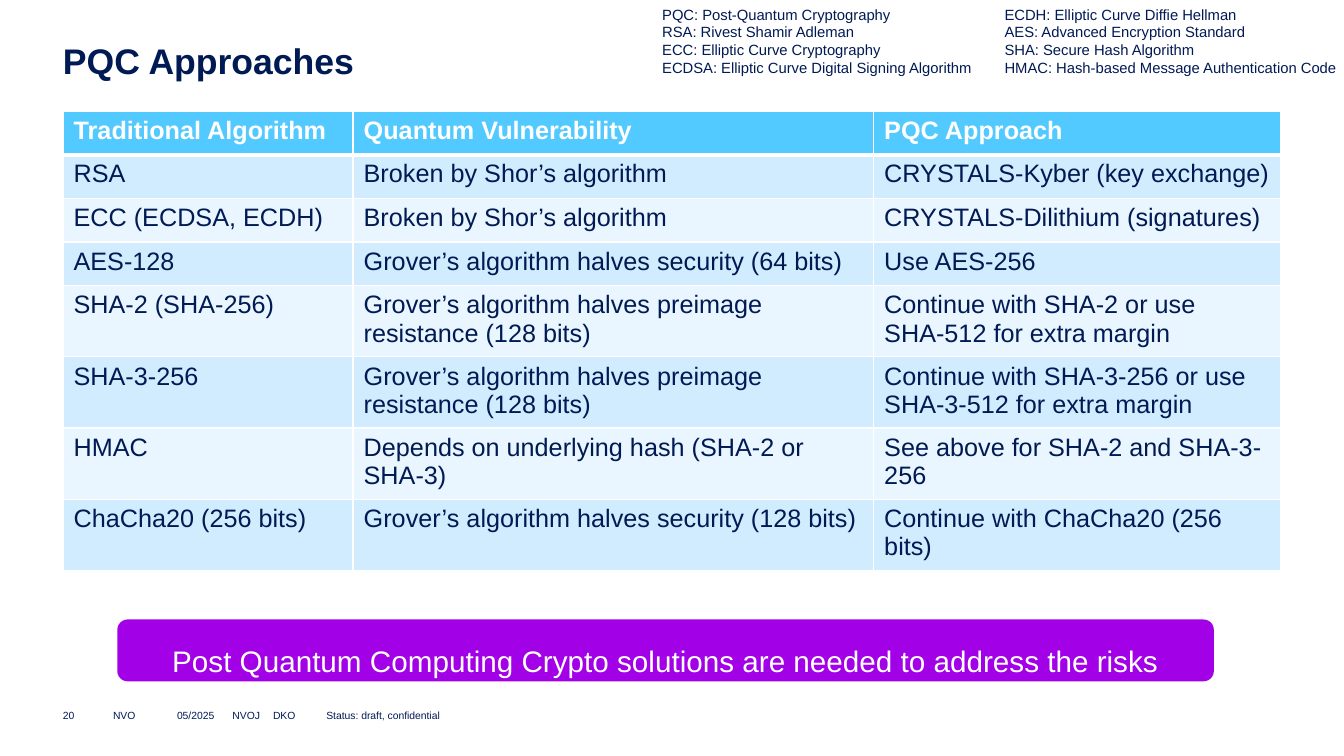
from pptx import Presentation
from pptx import util as u
from pptx.dml.color import RGBColor
from pptx.enum import shapes, text
from pptx.oxml import parse_xml
from pptx.oxml.ns import nsdecls

# Content
TITLE = "PQC Approaches"
TERMS = [
    (6.11, ["PQC: Post-Quantum Cryptography",
            "RSA: Rivest Shamir Adleman",
            "ECC: Elliptic Curve Cryptography",
            "ECDSA: Elliptic Curve Digital Signing Algorithm"]),
    (9.32, ["ECDH: Elliptic Curve Diffie Hellman",
            "AES: Advanced Encryption Standard",
            "SHA: Secure Hash Algorithm",
            "HMAC: Hash-based Message Authentication Code"]),
]
ROWS = [
    ("Traditional Algorithm", "Quantum Vulnerability", "PQC Approach"),
    ("RSA", "Broken by Shor’s algorithm", "CRYSTALS-Kyber (key exchange)"),
    ("ECC (ECDSA, ECDH)", "Broken by Shor’s algorithm",
     "CRYSTALS-Dilithium (signatures)"),
    ("AES-128", "Grover’s algorithm halves security (64 bits)", "Use AES-256"),
    ("SHA-2 (SHA-256)",
     "Grover’s algorithm halves preimage resistance (128 bits)",
     "Continue with SHA-2 or use SHA-512 for extra margin"),
    ("SHA-3-256",
     "Grover’s algorithm halves preimage resistance (128 bits)",
     "Continue with SHA-3-256 or use SHA-3-512 for extra margin"),
    ("HMAC", "Depends on underlying hash (SHA-2 or SHA-3)",
     "See above for SHA-2 and SHA-3-256"),
    ("ChaCha20 (256 bits)", "Grover’s algorithm halves security (128 bits)",
     "Continue with ChaCha20 (256 bits)"),
]
CLAIM = "Post Quantum Computing Crypto solutions are needed to address the risks"
PAGE = "20"
FOOTER = ["NVO", "05/2025", "NVOJ", "DKO", "Status: draft, confidential"]
STOPS = [0.2, 0.6, 0.85, 1.12]

# Style
HUE = {"navy": "001A54", "white": "FFFFFF", "head": "52C9FF",
       "odd": "D1EBFF", "even": "E9F5FF", "claim": "A200E6"}
FONT = "Arial"
LEFT, WIDTH = 0.59, 11.42
COLS = [2.72, 4.88, 3.82]
ROW_H = 0.41


def color(name):
    return RGBColor.from_string(HUE[name])


def write(frame, lines, size, hue="navy", bold=False, align=None,
          inset=None, anchor=None, stops=()):
    """Fill a text frame, one paragraph per line."""
    frame.word_wrap = True
    if anchor is not None:
        frame.vertical_anchor = anchor
    if inset is not None:
        (frame.margin_left, frame.margin_top,
         frame.margin_right, frame.margin_bottom) = map(u.Inches, inset)
    for i, line in enumerate(lines):
        para = frame.paragraphs[0] if i == 0 else frame.add_paragraph()
        if stops:
            tabs = "".join(f'<a:tab pos="{u.Inches(s)}" algn="l"/>' for s in stops)
            para._p.get_or_add_pPr().append(
                parse_xml(f'<a:tabLst {nsdecls("a")}>{tabs}</a:tabLst>'))
        if align is not None:
            para.alignment = align
        run = para.add_run()
        run.text = line
        font = run.font
        font.name, font.size, font.bold = FONT, u.Pt(size), bold
        font.color.rgb = color(hue)
    return frame


def place(x, y, w, h):
    return [u.Inches(v) for v in (x, y, w, h)]


def border(cell, top, bottom):
    props = cell._tc.get_or_add_tcPr()
    for side, width in zip("LRTB", (1, 1, top, bottom)):
        props.append(parse_xml(
            f'<a:ln{side} {nsdecls("a")} w="{u.Pt(width)}"><a:solidFill>'
            f'<a:srgbClr val="{HUE["white"]}"/></a:solidFill></a:ln{side}>'))


def main():
    deck = Presentation()
    deck.slide_width, deck.slide_height = u.Inches(12.6), u.Inches(7.09)
    slide = deck.slides.add_slide(deck.slide_layouts[6])
    parts = slide.shapes
    flat, mid = (0, 0, 0, 0), text.MSO_ANCHOR.MIDDLE

    # Title
    box = parts.add_textbox(*place(LEFT, 0.39, WIDTH, 0.4))
    title = write(box.text_frame, [TITLE], 24, bold=True, inset=flat)
    title.paragraphs[0].line_spacing = 0.97

    # Footer and page number
    box = parts.add_textbox(*place(1.06, 6.61, 5.04, 0.2))
    write(box.text_frame, ["\t".join(FOOTER)], 7, inset=flat, anchor=mid,
          stops=STOPS)
    box = parts.add_textbox(*place(LEFT, 6.61, 0.39, 0.2))
    write(box.text_frame, [PAGE], 7, inset=flat, anchor=mid)

    # Claim bar
    bar = parts.add_shape(shapes.MSO_SHAPE.ROUNDED_RECTANGLE,
                          *place(1.1, 5.81, 10.28, 0.58))
    bar.shadow.inherit = False
    bar.fill.solid()
    bar.fill.fore_color.rgb = color("claim")
    bar.line.fill.background()
    write(bar.text_frame, [CLAIM], 20, hue="white", align=text.PP_ALIGN.CENTER,
          inset=(0.16, 0.19, 0.16, 0.05), anchor=text.MSO_ANCHOR.TOP)

    # Abbreviations
    for x, lines in TERMS:
        box = parts.add_textbox(*place(x, 0, 3.43, 0.77))
        write(box.text_frame, lines, 10)

    # Table
    grid = parts.add_table(len(ROWS), len(COLS),
                           *place(LEFT, 1.04, WIDTH, ROW_H * len(ROWS))).table
    for col, width in zip(grid.columns, COLS):
        col.width = u.Inches(width)
    for r, row in enumerate(ROWS):
        grid.rows[r].height = u.Inches(ROW_H)
        head = r == 0
        fill = "head" if head else ("even", "odd")[r % 2]
        for c, words in enumerate(row):
            cell = grid.cell(r, c)
            border(cell, 3 if r == 1 else 1, 3 if head else 1)
            cell.fill.solid()
            cell.fill.fore_color.rgb = color(fill)
            write(cell.text_frame, [words], 17, bold=head,
                  hue="white" if head else "navy")

    deck.save("out.pptx")


if __name__ == "__main__":
    main()
